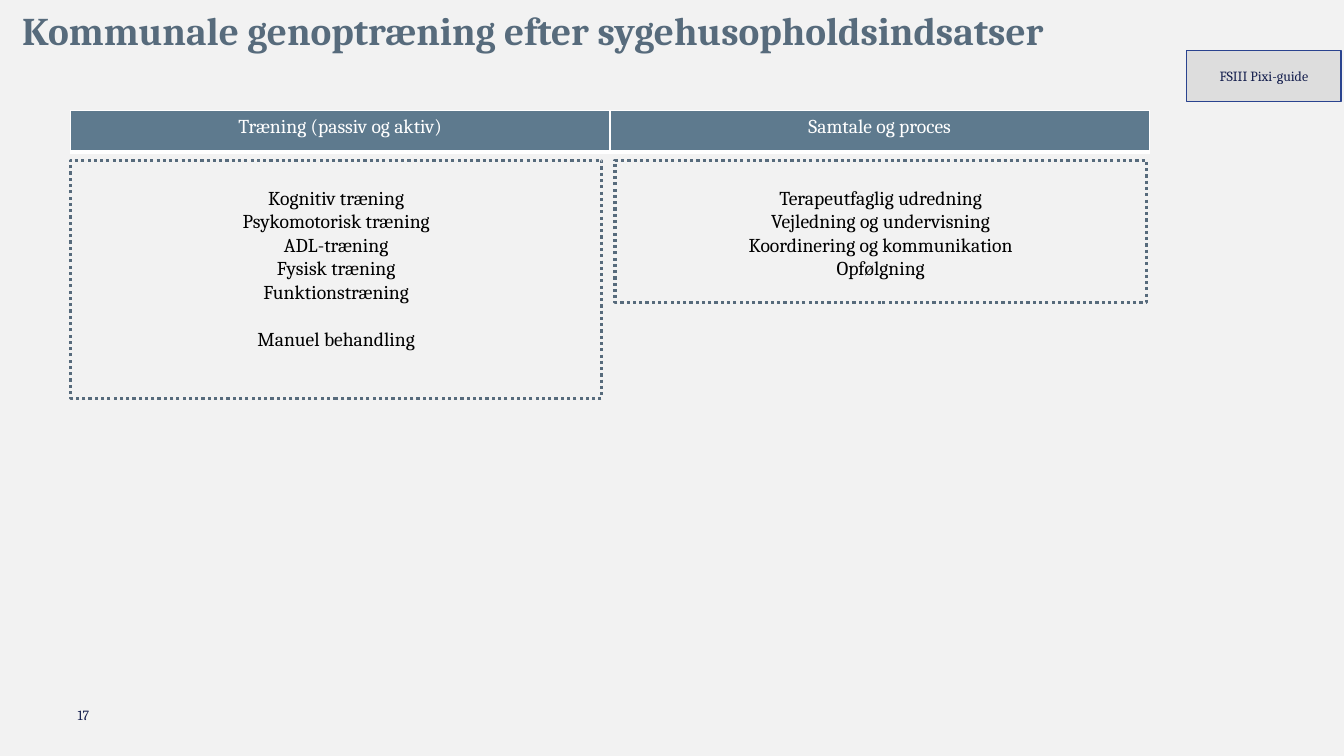
from lxml.etree import SubElement
from pptx import Presentation
from pptx.dml.color import RGBColor as Color
from pptx.enum.dml import MSO_LINE_DASH_STYLE as Dash
from pptx.enum.shapes import MSO_SHAPE as Shape
from pptx.enum.text import MSO_ANCHOR as Anchor, MSO_AUTO_SIZE as AutoSize, PP_ALIGN as Align
from pptx.oxml.ns import qn
from pptx.util import Inches, Pt

THEME = {
    "font": "Cambria",
    "paper": Color.from_string("F2F2F2"),
    "slate": Color.from_string("576B7C"),
    "header": Color.from_string("5E7A8E"),
    "navy": Color.from_string("141E4D"),
    "blue": Color.from_string("2A438F"),
    "grey": Color.from_string("DDDDDD"),
    "white": Color.from_string("FFFFFF"),
    "black": Color.from_string("000000"),
    "title": Pt(28),
    "body": Pt(14),
    "small": Pt(10),
}
GRID = Inches(0.1)


def area(*cells):
    return [round(cell * GRID) for cell in cells]


def write(frame, lines, size, color, align=Align.CENTER, anchor=Anchor.MIDDLE, inset=0, bold=False):
    settings = {"word_wrap": True, "auto_size": AutoSize.NONE, "vertical_anchor": anchor,
                "margin_left": 0, "margin_right": 0, "margin_top": inset, "margin_bottom": 0}
    for name, value in settings.items():
        setattr(frame, name, value)
    for index, line in enumerate(lines):
        para = frame.paragraphs[0] if index == 0 else frame.add_paragraph()
        para.alignment = align
        span = para.add_run()
        span.text = line
        span.font.color.rgb = THEME[color]
        for name, value in {"name": THEME["font"], "size": THEME[size], "bold": bold}.items():
            setattr(span.font, name, value)


deck = Presentation()
deck.slide_width, deck.slide_height = Inches(13.33), Inches(7.5)
page = deck.slides.add_slide(deck.slide_layouts[5])
page.background.fill.solid()
page.background.fill.fore_color.rgb = THEME["paper"]

number = page.shapes.add_textbox(*area(7.7, 68.9, 30, 4))
write(number.text_frame, ["17"], "small", "navy", Align.LEFT)

guide = page.shapes.add_shape(Shape.RECTANGLE, *area(117.7, 5, 15.3, 5.1))
guide.shadow.inherit = False
guide.fill.solid()
guide.fill.fore_color.rgb = THEME["grey"]
guide.line.color.rgb = THEME["blue"]
guide.line.width = Pt(1)
write(guide.text_frame, ["FSIII Pixi-guide"], "small", "navy")

title = page.shapes.title
title.left, title.top, title.width, title.height = area(2.2, -1.3, 116.7, 6.7)
write(title.text_frame, ["Kommunale genoptræning efter sygehusopholdsindsatser"],
      "title", "slate", Align.LEFT, Anchor.BOTTOM, bold=True)
title.text_frame.paragraphs[0].line_spacing = 0.9

columns = [
    ("Træning (passiv og aktiv)", 23.6,
     ["Kognitiv træning", "Psykomotorisk træning", "ADL-træning", "Fysisk træning",
      "Funktionstræning", "Manuel behandling"]),
    ("Samtale og proces", 14.1,
     ["Terapeutfaglig udredning", "Vejledning og undervisning",
      "Koordinering og kommunikation", "Opfølgning"]),
]
table = page.shapes.add_table(1, len(columns), *area(7, 11, 107, 4.1)).table
borders = {"a:lnL": Pt(1), "a:lnR": Pt(1), "a:lnT": Pt(1), "a:lnB": Pt(3)}

for index, (heading, height, lines) in enumerate(columns):
    cell = table.cell(0, index)
    write(cell.text_frame, [heading], "body", "white")
    cell.vertical_anchor = Anchor.TOP
    cell.margin_top = cell.margin_bottom = Inches(0.05)
    properties = cell._tc.get_or_add_tcPr()
    for tag, width in borders.items():
        edge = SubElement(properties, qn(tag), w=str(width))
        SubElement(SubElement(edge, qn("a:solidFill")), qn("a:srgbClr"), val=str(THEME["white"]))
    cell.fill.solid()
    cell.fill.fore_color.rgb = THEME["header"]

    box = page.shapes.add_shape(Shape.RECTANGLE, *area(7 + 54 * index, 15.9, 52.7, height))
    box.shadow.inherit = False
    box.fill.background()
    box.line.color.rgb = THEME["slate"]
    for name, value in {"width": Pt(2.25), "dash_style": Dash.ROUND_DOT}.items():
        setattr(box.line, name, value)
    write(box.text_frame, lines, "body", "black", anchor=Anchor.TOP, inset=Inches(0.25))
    for para in box.text_frame.paragraphs:
        if para.text == "Manuel behandling":
            para.space_before = Pt(16.8)

deck.save("out.pptx")
